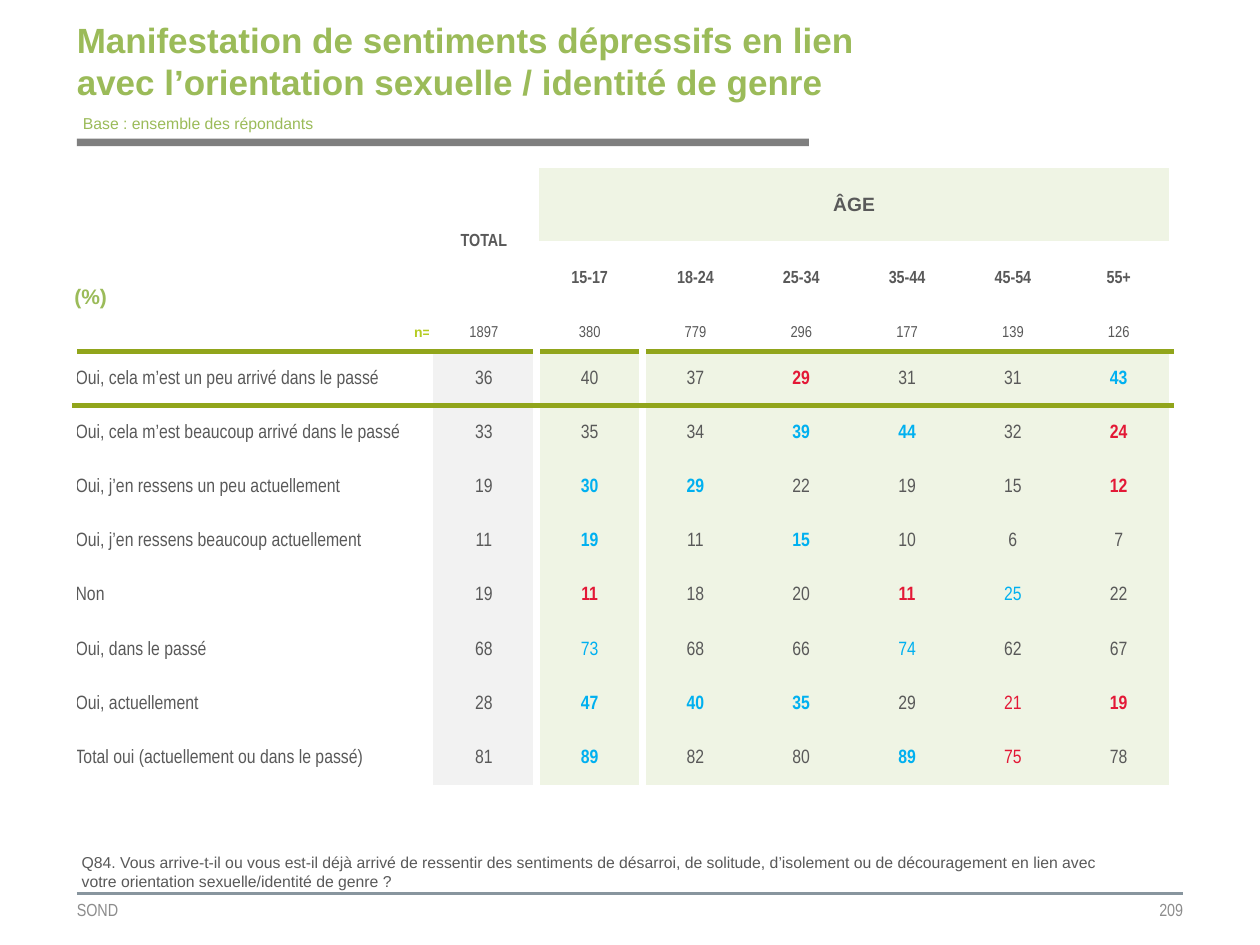
from dataclasses import dataclass

from lxml import etree
from pptx import Presentation
from pptx.dml.color import RGBColor
from pptx.enum.shapes import MSO_CONNECTOR, MSO_SHAPE
from pptx.enum.text import MSO_ANCHOR, PP_ALIGN
from pptx.oxml.ns import qn
from pptx.util import Inches, Pt

LEFT, CENTER, RIGHT = PP_ALIGN.LEFT, PP_ALIGN.CENTER, PP_ALIGN.RIGHT
TOP, MIDDLE, BOTTOM = MSO_ANCHOR.TOP, MSO_ANCHOR.MIDDLE, MSO_ANCHOR.BOTTOM
SANS, NARROW = "Arial", "Arial Narrow"
GREEN, LIME, OLIVE, PALE = "9BBB59", "B5CC22", "91A51B", "EFF4E4"
INK, GREY, BAND, WHITE = "595959", "8C8C8C", "F2F2F2", "FFFFFF"
HIGH, LOW = "00B0F0", "E31836"
PLAIN_TABLE = "{2D5ABB26-0587-4C30-8999-92F81FD0307C}"


@dataclass(frozen=True)
class Style:
    size: float
    color: str = INK
    bold: bool = False
    font: str = NARROW
    align: PP_ALIGN = CENTER
    anchor: MSO_ANCHOR = MIDDLE
    spacing: float | None = None


@dataclass(frozen=True)
class Label:
    text: str
    place: tuple[float, float, float, float]
    style: Style
    insets: tuple[float, float, float, float] = (0, 0, 0, 0)
    wrap: bool = True


PADDED = (0.1, 0.05, 0.1, 0.05)
CELL_INSETS, SIDE_INSETS = (0.01, 0.01, 0.01, 0), (0, 0.05, 0, 0.05)
BASE = Style(9, GREEN, font=SANS, align=LEFT, anchor=TOP)
QUESTION = Style(9, font=SANS, align=LEFT, anchor=TOP)
TITLE = Style(20, GREEN, True, SANS, LEFT)
HEAD, COUNT = Style(10, bold=True), Style(9)

LABELS = [
    Label("SOND", (0.61, 7.09, 2.8, 0.26), Style(10, GREY, align=LEFT)),
    Label("209", (6.55, 7.09, 2.84, 0.26), Style(10, GREY, align=RIGHT)),
    Label("Base : ensemble des répondants", (0.56, 0.85, 2.08, 0.25), BASE, PADDED, False),
    Label("Q84. Vous arrive-t-il ou vous est-il déjà arrivé de ressentir des sentiments de "
          "désarroi, de solitude, d’isolement ou de découragement en lien avec votre "
          "orientation sexuelle/identité de genre ?", (0.55, 6.72, 8.55, 0.4), QUESTION, PADDED),
    Label("Manifestation de sentiments dépressifs en lien avec l’orientation sexuelle / "
          "identité de genre", (0.61, 0.27, 6.36, 0.69), TITLE, (0, 0, 0, 0.27)),
]

AGES = ["15-17", "18-24", "25-34", "35-44", "45-54", "55+"]
COUNTS = ["1897", "380", "779", "296", "177", "139", "126"]
# Total, then ages: + marks a high value, - a low one; a doubled mark is bold
ANSWERS = {
    "Oui, cela m’est un peu arrivé dans le passé": "36 40 37 29-- 31 31 43++",
    "Oui, cela m’est beaucoup arrivé dans le passé": "33 35 34 39++ 44++ 32 24--",
    "Oui, j’en ressens un peu actuellement": "19 30++ 29++ 22 19 15 12--",
    "Oui, j’en ressens beaucoup actuellement": "11 19++ 11 15++ 10 6 7",
    "Non": "19 11-- 18 20 11-- 25+ 22",
    "Oui, dans le passé": "68 73+ 68 66 74+ 62 67",
    "Oui, actuellement": "28 47++ 40++ 35++ 29 21- 19--",
    "Total oui (actuellement ou dans le passé)": "81 89++ 82 80 89++ 75- 78",
}
HEADER_HEIGHTS = [0.4, 0.18, 0.59, 0.29]
FIRST_ANSWER = len(HEADER_HEIGHTS)
COLUMN_WIDTHS = [2.83] + [0.84] * 7
LAST_COLUMN = len(COLUMN_WIDTHS) - 1


def rgb(value: str) -> RGBColor:
    return RGBColor.from_string(value)


def set_text(frame, text: str, style: Style) -> None:
    para = frame.paragraphs[0]
    para.alignment = style.align
    if style.spacing:
        para.line_spacing = style.spacing
    font = para.font
    font.size, font.name, font.bold = Pt(style.size), style.font, style.bold
    font.color.rgb = rgb(style.color)
    if text:
        para.add_run().text = text


def set_insets(target, insets: tuple[float, float, float, float]) -> None:
    (target.margin_left, target.margin_top,
     target.margin_right, target.margin_bottom) = map(Inches, insets)


def add_label(page, label: Label) -> None:
    frame = page.shapes.add_textbox(*map(Inches, label.place)).text_frame
    frame.word_wrap = label.wrap
    frame.vertical_anchor = label.style.anchor
    set_insets(frame, label.insets)
    set_text(frame, label.text, label.style)


def add_rules(page) -> None:
    line = page.shapes.add_connector(MSO_CONNECTOR.STRAIGHT, Inches(0.61), Inches(7.09),
                                     Inches(9.39), Inches(7.09))
    line.line.color.rgb = rgb("88959E")
    line.line.width = Pt(1.5)
    etree.SubElement(line._element.spPr, qn("a:effectLst"))
    bar = page.shapes.add_shape(MSO_SHAPE.RECTANGLE, Inches(0.61), Inches(1.1),
                                Inches(5.81), Inches(0.06))
    bar.shadow.inherit = False
    bar.fill.solid()
    bar.fill.fore_color.rgb = rgb("7F7F7F")
    bar.line.fill.background()


def cell_borders(row: int, column: int) -> dict[str, tuple[str, float]]:
    """Borders by side, in the order that the file format asks for."""
    answer = row >= FIRST_ANSWER
    gap = 4.5 if answer else 3
    borders = {}
    if column and (not answer or column <= 2):
        borders["L"] = (WHITE, gap if column == 2 else 3)
    elif answer and column == 0:
        borders["L"] = (WHITE, 3)
    if not answer or column <= 1 or column == LAST_COLUMN:
        borders["R"] = (WHITE, gap if column == 1 else 3)
    if row == FIRST_ANSWER:
        borders["T"] = (OLIVE, 3)
    if row == FIRST_ANSWER - 1:
        borders["B"] = (OLIVE, 3)
    return borders


def format_cell(cell, row: int, column: int) -> None:
    properties = cell._tc.get_or_add_tcPr()
    for side, (color, width) in cell_borders(row, column).items():
        border = etree.SubElement(properties, qn(f"a:ln{side}"), w=str(Pt(width)))
        fill = etree.SubElement(border, qn("a:solidFill"))
        etree.SubElement(fill, qn("a:srgbClr"), val=color)
    age_band = column >= 2 and (row < 2 or row >= FIRST_ANSWER)
    total_band = column == 1 and row >= FIRST_ANSWER
    if age_band or total_band:
        cell.fill.solid()
        cell.fill.fore_color.rgb = rgb(PALE if age_band else BAND)
    else:
        cell.fill.background()


def answer_style(mark: str) -> Style:
    color = HIGH if "+" in mark else LOW if "-" in mark else INK
    return Style(11, color, len(mark) == 2)


def table_entries() -> dict[tuple[int, int], tuple[str, Style]]:
    entries = {
        (0, 1): ("TOTAL", HEAD),
        (0, 2): ("ÂGE", Style(11, bold=True, font=SANS)),
        (1, 0): ("(%)", Style(12, GREEN, True, SANS, LEFT, BOTTOM, 0.95)),
        (3, 0): ("n=", Style(8, LIME, True, SANS, RIGHT, spacing=0.95)),
    }
    entries.update({(2, column): (age, HEAD) for column, age in enumerate(AGES, 2)})
    entries.update({(3, column): (count, COUNT) for column, count in enumerate(COUNTS, 1)})
    for row, (answer, values) in enumerate(ANSWERS.items(), FIRST_ANSWER):
        entries[row, 0] = (answer, Style(11, align=LEFT))
        for column, value in enumerate(values.split(), 1):
            number = value.rstrip("+-")
            entries[row, column] = (number, answer_style(value[len(number):]))
    return entries


def add_results(page) -> None:
    heights = HEADER_HEIGHTS + [0.43] * len(ANSWERS)
    frame = page.shapes.add_table(len(heights), len(COLUMN_WIDTHS), Inches(0.59), Inches(1.33),
                                  Inches(sum(COLUMN_WIDTHS)), Inches(sum(heights)))
    table = frame.table
    table.first_row = table.horz_banding = False
    table._tbl.tblPr.find(qn("a:tableStyleId")).text = PLAIN_TABLE
    for column, width in zip(table.columns, COLUMN_WIDTHS):
        column.width = Inches(width)
    for row, height in zip(table.rows, heights):
        row.height = Inches(height)
    entries = table_entries()
    for row in range(len(heights)):
        for column in range(len(COLUMN_WIDTHS)):
            cell = table.cell(row, column)
            text, style = entries.get((row, column), ("", Style(8)))
            set_text(cell.text_frame, text, style)
            cell.vertical_anchor = style.anchor
            set_insets(cell, SIDE_INSETS if style.spacing else CELL_INSETS)
            format_cell(cell, row, column)
    # Header cells that span rows or columns
    for first, last in [((0, 1), (2, 1)), ((0, 2), (1, LAST_COLUMN)), ((1, 0), (2, 0))]:
        table.cell(*first).merge(table.cell(*last))


def main() -> None:
    deck = Presentation()
    deck.slide_width, deck.slide_height = Inches(10), Inches(7.5)
    page = deck.slides.add_slide(deck.slide_layouts[6])
    add_rules(page)
    add_results(page)
    for label in LABELS:
        add_label(page, label)
    deck.save("out.pptx")


if __name__ == "__main__":
    main()
